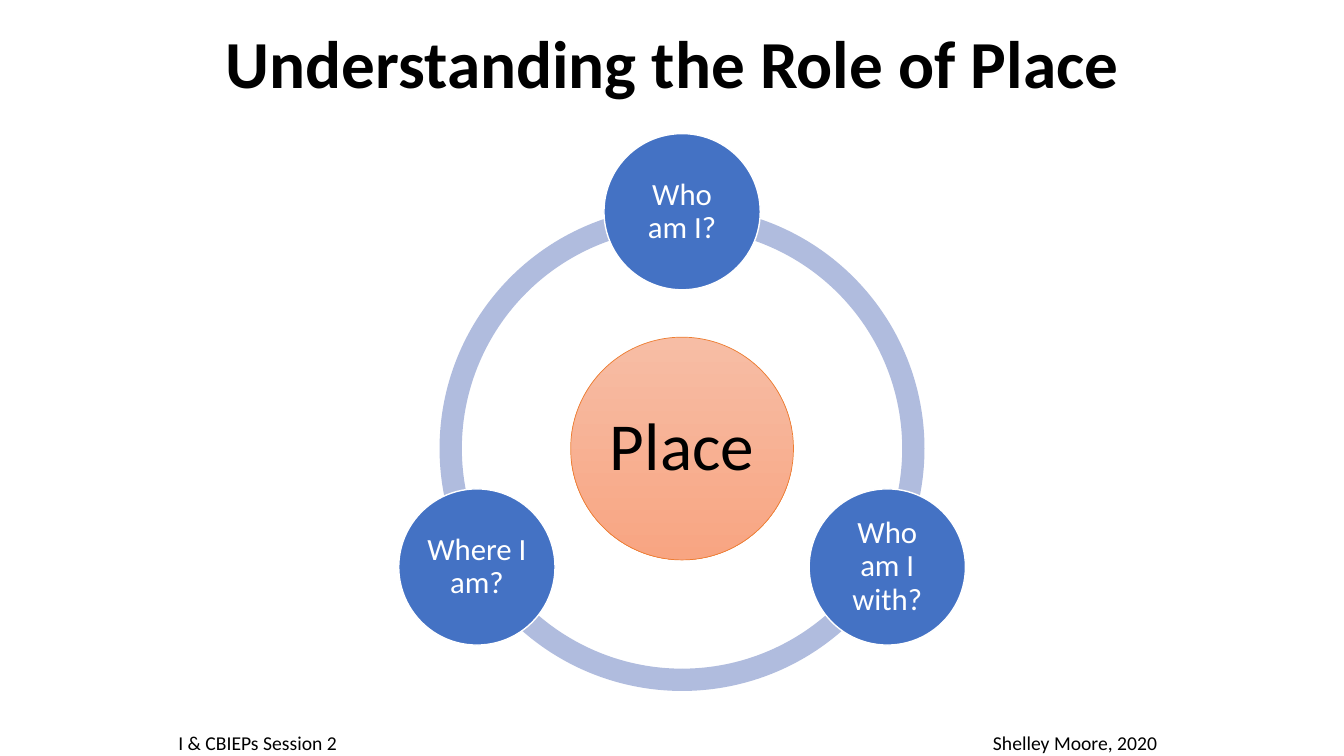
from dataclasses import dataclass
from math import cos, radians, sin

from lxml.etree import SubElement
from pptx import Presentation
from pptx.dml.color import RGBColor
from pptx.enum.shapes import MSO_SHAPE as Preset
from pptx.enum.text import MSO_ANCHOR as Anchor, MSO_AUTO_SIZE as AutoSize, PP_ALIGN as Align
from pptx.oxml.ns import qn
from pptx.shapes.autoshape import Shape
from pptx.slide import Slide
from pptx.text.text import TextFrame
from pptx.util import Inches, Pt

COLORS = {
    "black": "000000",
    "white": "FFFFFF",
    "node": "4472C4",
    "ring": "B0BCDE",
    "hub_line": "ED7D31",
    "hub_top": "F7BDA5",
    "hub_bottom": "F8A582",
}
FONT = "Calibri"
CENTER_X, CENTER_Y = 6.765, 4.45
RING_SIZE, RING_THICKNESS = 4.81, 0.046
HUB_SIZE, NODE_SIZE, ORBIT = 2.21, 1.55, 2.35


@dataclass
class Node:
    label: str
    angle: float


@dataclass
class Arc:
    start: float
    end: float


NODES = [Node("Who am I?", -90), Node("Who am I with?", 30), Node("Where I am?", 150)]
ARCS = [Arc(90, 162), Arc(18, 90), Arc(162, 18)]


def color(name: str) -> RGBColor:
    return RGBColor.from_string(COLORS[name])


def write(frame: TextFrame, text: str, *, size: float, ink: str = "black",
          bold: bool = False, align: Align = Align.CENTER, spacing: float = 0.9,
          anchor: Anchor = Anchor.MIDDLE, inset: float = 0.03) -> None:
    frame.word_wrap = True
    frame.vertical_anchor = anchor
    frame.margin_left = frame.margin_right = Inches(inset)
    frame.margin_top = frame.margin_bottom = Inches(min(inset, 0.05))
    para = frame.paragraphs[0]
    para.alignment = align
    para.line_spacing = spacing
    span = para.add_run()
    span.text = text
    span.font.name = FONT
    span.font.size = Pt(size)
    span.font.bold = bold
    span.font.color.rgb = color(ink)


def add_centered(page: Slide, preset: Preset, x: float, y: float, size: float) -> Shape:
    shape = page.shapes.add_shape(preset, Inches(x - size / 2), Inches(y - size / 2),
                                  Inches(size), Inches(size))
    shape.shadow.inherit = False
    return shape


def add_arc(page: Slide, arc: Arc) -> None:
    shape = add_centered(page, Preset.BLOCK_ARC, CENTER_X, CENTER_Y, RING_SIZE)
    # Angles are stored in 60000ths of a degree, adjustments in 100000ths
    shape.adjustments[0] = arc.start * 0.6
    shape.adjustments[1] = arc.end * 0.6
    shape.adjustments[2] = RING_THICKNESS
    shape.fill.solid()
    shape.fill.fore_color.rgb = color("ring")
    shape.line.fill.background()


def add_hub(page: Slide) -> None:
    hub = add_centered(page, Preset.OVAL, CENTER_X, CENTER_Y, HUB_SIZE)
    hub.fill.gradient()
    hub.fill.gradient_angle = 270
    for stop, name in zip(hub.fill.gradient_stops, ("hub_top", "hub_bottom")):
        stop.color.rgb = color(name)
    hub.line.color.rgb = color("hub_line")
    hub.line.width = Pt(0.5)
    write(hub.text_frame, "Place", size=48)


def add_node(page: Slide, node: Node) -> None:
    angle = radians(node.angle)
    circle = add_centered(page, Preset.OVAL, CENTER_X + ORBIT * cos(angle),
                          CENTER_Y + ORBIT * sin(angle), NODE_SIZE)
    circle.fill.solid()
    circle.fill.fore_color.rgb = color("node")
    circle.line.color.rgb = color("white")
    circle.line.width = Pt(1)
    write(circle.text_frame, node.label, size=22, ink="white")


def add_footer(page: Slide) -> None:
    box = page.shapes.add_textbox(Inches(1.67), Inches(7.2), Inches(10), Inches(0.34))
    # Right tab stop for the author
    properties = box.text_frame.paragraphs[0]._p.get_or_add_pPr()
    tabs = SubElement(properties, qn("a:tabLst"))
    SubElement(tabs, qn("a:tab"), pos=str(Inches(9.71)), algn="r")
    write(box.text_frame, "I & CBIEPs Session 2\tShelley Moore, 2020", size=14,
          align=Align.LEFT, spacing=1.0, anchor=Anchor.TOP, inset=0.1)


def main() -> None:
    deck = Presentation()
    deck.slide_width, deck.slide_height = Inches(13.33), Inches(7.5)
    page = deck.slides.add_slide(deck.slide_layouts[5])

    # Title
    title = page.shapes.title
    title.left, title.top = Inches(1.91), Inches(0.2)
    title.width, title.height = Inches(9.52), Inches(0.93)
    title.text_frame.auto_size = AutoSize.NONE
    write(title.text_frame, "Understanding the Role of Place", size=48, bold=True, inset=0.1)

    # Ring, hub and nodes
    for arc in ARCS:
        add_arc(page, arc)
    add_hub(page)
    for node in NODES:
        add_node(page, node)

    add_footer(page)
    deck.save("out.pptx")


if __name__ == "__main__":
    main()
